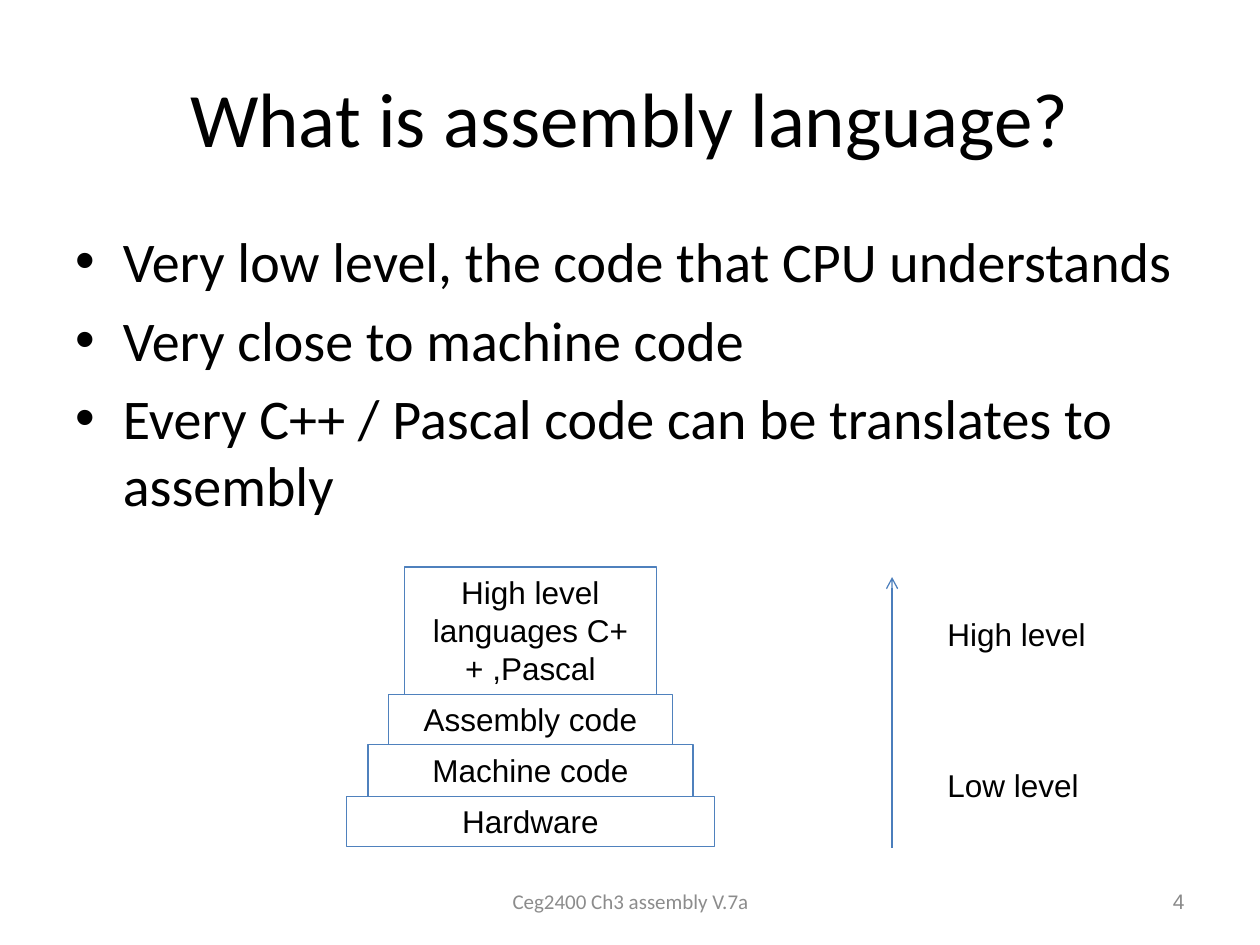
from dataclasses import dataclass

from lxml.etree import SubElement
from pptx import Presentation
from pptx.dml.color import RGBColor
from pptx.enum.shapes import MSO_CONNECTOR as Connector, MSO_SHAPE as Shape
from pptx.enum.text import MSO_ANCHOR as Anchor, MSO_AUTO_SIZE as AutoSize, PP_ALIGN as Align
from pptx.oxml.ns import qn
from pptx.util import Inches, Pt


@dataclass(frozen=True)
class Theme:
    text: RGBColor = RGBColor(0x00, 0x00, 0x00)
    footer: RGBColor = RGBColor(0x8C, 0x8C, 0x8C)
    number: RGBColor = RGBColor(0x89, 0x89, 0x89)
    outline: RGBColor = RGBColor(0x4F, 0x81, 0xBD)
    arrow: RGBColor = RGBColor(0x4B, 0x7E, 0xBC)
    heading_font: str = "Calibri"
    label_font: str = "Arial"
    title_size: int = 44
    body_size: int = 32
    label_size: int = 18
    footer_size: int = 12
    line_width: float = 0.75


THEME = Theme()
BULLETS = [
    "Very low level, the code that CPU understands",
    "Very close to machine code",
    "Every C++ / Pascal code can be translates to assembly",
]
LAYERS = [
    ("High level languages C++ ,Pascal", 2, 1.01),
    ("Assembly code", 2.25, 0.4),
    ("Machine code", 2.58, 0.41),
    ("Hardware", 2.92, 0.4),
]


def apply_format(target, values):
    for name, value in values.items():
        setattr(target, name, value)


def place(shape, box):
    names = ("left", "top", "width", "height")
    apply_format(shape, dict(zip(names, map(Inches, box))))


def write(shape, lines, font, size, color, align, **frame_format):
    frame = shape.text_frame
    apply_format(frame, {"word_wrap": True, "auto_size": AutoSize.NONE} | frame_format)
    frame.text = "\n".join(lines)
    for paragraph in frame.paragraphs:
        paragraph.alignment = align
        apply_format(paragraph.font, {"name": font, "size": Pt(size)})
        paragraph.font.color.rgb = color
    return frame


def add_title(slide, box):
    title = slide.shapes.title
    place(title, box)
    write(title, ["What is assembly language?"], THEME.heading_font, THEME.title_size,
          THEME.text, Align.CENTER, vertical_anchor=Anchor.MIDDLE)


def add_bullets(slide, box):
    body = slide.placeholders[1]
    place(body, box)
    write(body, BULLETS, THEME.heading_font, THEME.body_size, THEME.text, Align.LEFT)


def add_layers(slide, box):
    left, top, width, _ = box
    for text, layer_width, height in LAYERS:
        layer_left = left + (width - layer_width) / 2
        layer = slide.shapes.add_shape(
            Shape.RECTANGLE, *map(Inches, (layer_left, top, layer_width, height)))
        layer.shadow.inherit = False
        layer.fill.background()
        layer.line.color.rgb = THEME.outline
        layer.line.width = Pt(THEME.line_width)
        write(layer, [text], THEME.label_font, THEME.label_size, THEME.text,
              Align.CENTER, vertical_anchor=Anchor.TOP)
        top += height


def add_level_scale(slide, box):
    left, top, width, height = box
    arrow = slide.shapes.add_connector(
        Connector.STRAIGHT, *map(Inches, (left, top + height, left, top)))
    arrow.line.color.rgb = THEME.arrow
    arrow.line.width = Pt(THEME.line_width)
    SubElement(arrow.line._get_or_add_ln(), qn("a:tailEnd"), type="arrow")
    SubElement(arrow._element.spPr, qn("a:effectLst"))

    label_offset = 0.34
    labels = slide.shapes.add_textbox(
        *map(Inches, (left + label_offset, top + 0.25, width - label_offset, 1.62)))
    frame = write(labels, ["High level", "Low level"], THEME.label_font, THEME.label_size,
                  THEME.text, Align.LEFT, word_wrap=False)
    frame.paragraphs[1].space_before = Pt(65)


def add_footer_text(slide, box, text, font, color, align):
    footer = slide.shapes.add_textbox(*map(Inches, box))
    write(footer, [text], font, THEME.footer_size, color, align,
          vertical_anchor=Anchor.MIDDLE)


def main():
    presentation = Presentation()
    presentation.slide_width = Inches(10)
    presentation.slide_height = Inches(7.5)
    slide = presentation.slides.add_slide(presentation.slide_layouts[1])
    add_title(slide, (0.5, 0.3, 9, 1.25))
    add_bullets(slide, (0.5, 1.75, 9, 2.75))
    add_footer_text(slide, (3.42, 6.95, 3.17, 0.4), "Ceg2400 Ch3 assembly V.7a",
                    THEME.heading_font, THEME.footer, Align.CENTER)
    add_footer_text(slide, (7.17, 6.95, 2.33, 0.4), "4",
                    THEME.label_font, THEME.number, Align.RIGHT)
    add_layers(slide, (2.75, 4.5, 2.92, 2.22))
    add_level_scale(slide, (7.08, 4.58, 1.65, 2.15))
    presentation.save("out.pptx")


if __name__ == "__main__":
    main()
